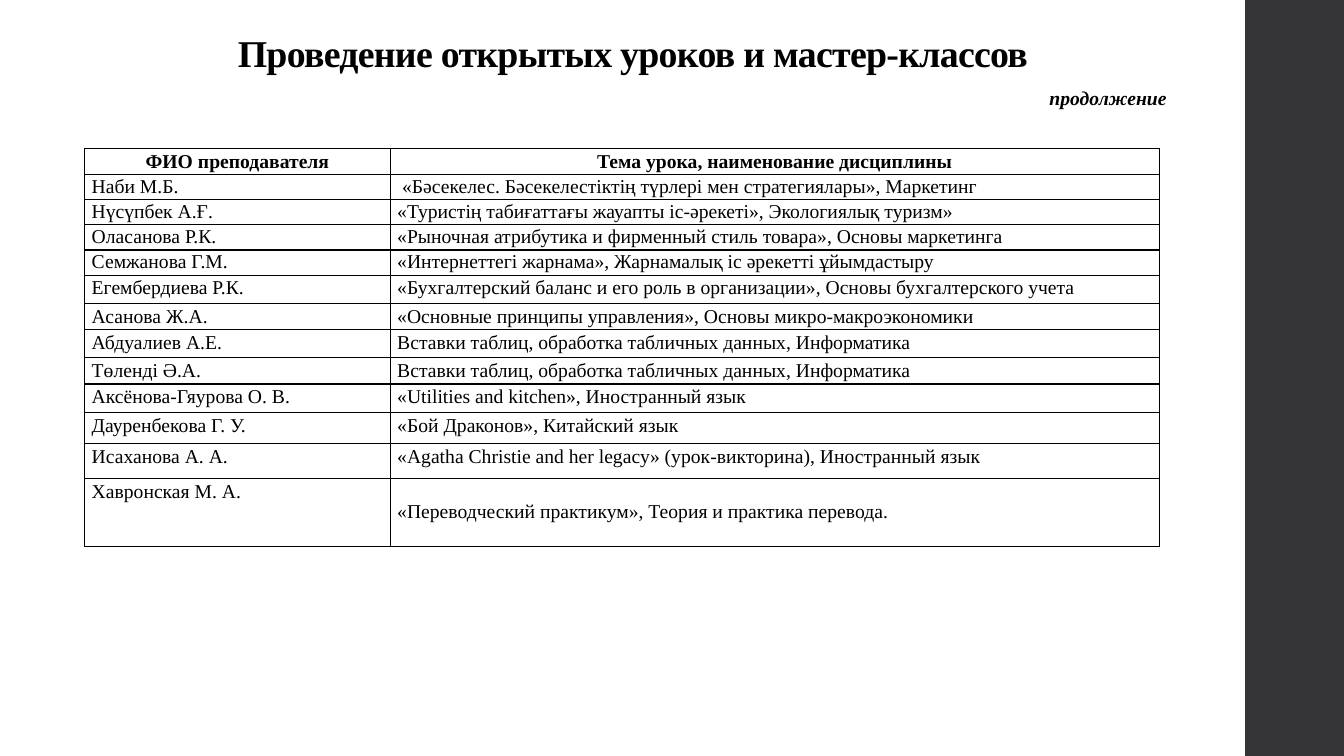
from pptx import Presentation
from pptx.dml.color import RGBColor
from pptx.enum.shapes import MSO_SHAPE
from pptx.enum.text import MSO_ANCHOR, PP_ALIGN
from pptx.oxml import parse_xml
from pptx.oxml.ns import nsdecls
from pptx.util import Inches, Pt

FONT = "Times New Roman"
COLORS = {"ink": "000000", "paper": "FFFFFF", "bar": "353537"}
HEAD = ("ФИО преподавателя", "Тема урока, наименование дисциплины")
# Teacher, lesson topic, row height in inches
LESSONS = [
    ("Наби М.Б.", " «Бәсекелес. Бәсекелестіктің түрлері мен стратегиялары», Маркетинг", 0.24),
    ("Нүсүпбек А.Ғ.", "«Туристің табиғаттағы жауапты іс-әрекеті», Экологиялық туризм»", 0.24),
    ("Оласанова Р.К.", "«Рыночная атрибутика и фирменный стиль товара», Основы маркетинга", 0.24),
    ("Семжанова Г.М.", "«Интернеттегі жарнама», Жарнамалық іс әрекетті ұйымдастыру", 0.25),
    ("Егембердиева Р.К.",
     "«Бухгалтерский баланс и его роль в организации», Основы бухгалтерского учета", 0.28),
    ("Асанова Ж.А.", "«Основные принципы управления», Основы микро-макроэкономики", 0.25),
    ("Абдуалиев А.Е.", "Вставки таблиц, обработка табличных данных, Информатика", 0.28),
    ("Төленді Ә.А.", "Вставки таблиц, обработка табличных данных, Информатика", 0.25),
    ("Аксёнова-Гяурова О. В.", "«Utilities and kitchen», Иностранный язык", 0.28),
    ("Дауренбекова Г. У.", "«Бой Драконов», Китайский язык", 0.31),
    ("Исаханова А. А.",
     "«Agatha Christie and her legacy» (урок-викторина), Иностранный язык", 0.35),
    ("Хавронская М. А.", "«Переводческий практикум», Теория и практика перевода.", 0.67),
]


def color(name):
    return RGBColor.from_string(COLORS[name])


def style(par, size, bold=False, italic=False):
    for run in par.runs:
        font = run.font
        font.name, font.size = FONT, Pt(size)
        font.bold, font.italic = bold, italic
        font.color.rgb = color("ink")


def add_bar(slide):
    bar = slide.shapes.add_shape(
        MSO_SHAPE.RECTANGLE, Inches(12.35), 0, Inches(0.98), Inches(7.5))
    bar.shadow.inherit = False
    bar.fill.solid()
    bar.fill.fore_color.rgb = color("bar")
    bar.line.fill.background()


def add_text(slide, text, left, top, width, height, size, italic=False):
    box = slide.shapes.add_textbox(
        Inches(left), Inches(top), Inches(width), Inches(height))
    frame = box.text_frame
    frame.word_wrap = True
    frame.text = text
    par = frame.paragraphs[0]
    style(par, size, bold=True, italic=italic)
    return frame, par


def add_edges(cell):
    props = cell._tc.get_or_add_tcPr()
    for spot, side in enumerate(("lnL", "lnR", "lnT", "lnB")):
        props.insert(spot, parse_xml(
            f'<a:{side} {nsdecls("a")} w="12700"><a:solidFill>'
            f'<a:srgbClr val="{COLORS["ink"]}"/></a:solidFill></a:{side}>'))


def fill_cell(cell, text, top, head=False):
    cell.margin_left = cell.margin_right = Inches(0.07)
    cell.margin_top, cell.margin_bottom = Inches(top), 0
    cell.fill.solid()
    cell.fill.fore_color.rgb = color("paper")
    add_edges(cell)
    cell.text_frame.text = text
    par = cell.text_frame.paragraphs[0]
    par.line_spacing, par.space_after = 1.07, Pt(8)
    if head:
        par.alignment = PP_ALIGN.CENTER
    style(par, 14, bold=head)
    return par


def add_grid(slide):
    rows = [(*HEAD, 0.25)] + LESSONS
    total = sum(row[2] for row in rows)
    grid = slide.shapes.add_table(
        len(rows), 2, Inches(0.84), Inches(1.47), Inches(10.66), Inches(total)).table
    for col, width in zip(grid.columns, (3.03, 7.63)):
        col.width = Inches(width)
    for i, (name, topic, height) in enumerate(rows):
        grid.rows[i].height = Inches(height)
        top = 0 if 1 <= i <= 5 else 0.01
        for j, text in enumerate((name, topic)):
            par = fill_cell(grid.cell(i, j), text, top, head=i == 0)
    # The last topic is double spaced
    par.line_spacing, par.space_after = 2.0, Pt(0)


def main():
    deck = Presentation()
    deck.slide_width, deck.slide_height = Inches(13.33), Inches(7.5)
    slide = deck.slides.add_slide(deck.slide_layouts[6])
    add_bar(slide)

    # Title
    frame, par = add_text(slide, "Проведение открытых уроков и мастер-классов",
                          0.45, 0.19, 11.65, 0.61, 27)
    frame.vertical_anchor = MSO_ANCHOR.BOTTOM
    par.alignment, par.line_spacing = PP_ALIGN.CENTER, 0.9
    par.runs[0].font._element.set("spc", "-50")

    # Lesson table and its continuation mark
    add_grid(slide)
    add_text(slide, "продолжение", 10.31, 0.8, 1.52, 0.34, 14, italic=True)
    deck.save("out.pptx")


if __name__ == "__main__":
    main()
